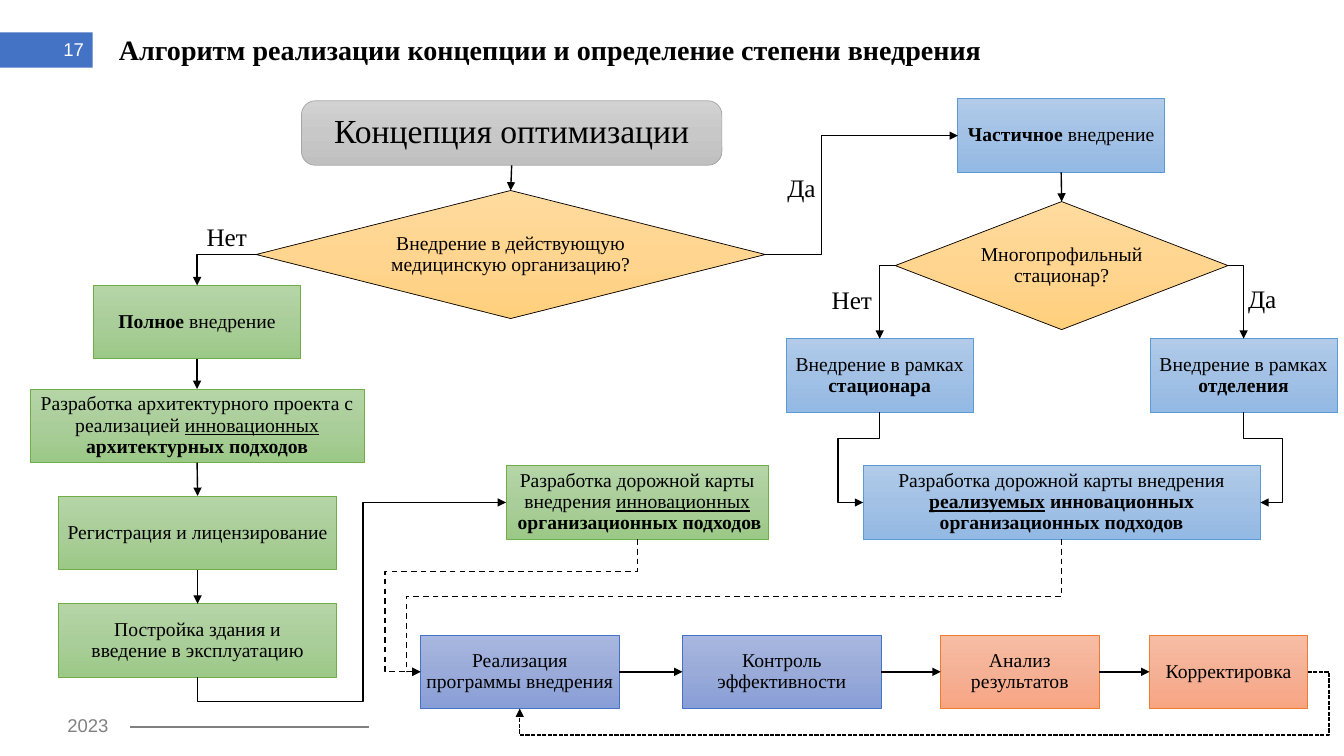
from copy import deepcopy
from dataclasses import dataclass
from enum import IntEnum
from typing import NamedTuple, Optional

from lxml.etree import SubElement
from pptx import Presentation
from pptx.dml.color import RGBColor
from pptx.enum.dml import MSO_LINE
from pptx.enum.shapes import MSO_CONNECTOR, MSO_SHAPE
from pptx.enum.text import MSO_ANCHOR, MSO_AUTO_SIZE, PP_ALIGN
from pptx.oxml.ns import qn
from pptx.util import Inches, Pt


class Tint(NamedTuple):
    top: str
    middle: str
    bottom: str
    outline: str


@dataclass(frozen=True)
class Theme:
    serif: str = "Times New Roman"
    sans: str = "Arial"
    ink: str = "000000"
    white: str = "FFFFFF"
    muted: str = "808080"
    accent: str = "4472C4"
    title_size: float = 20
    start_size: float = 24
    answer_size: float = 18
    step_size: float = 14
    footer_size: float = 13.2
    gray: Tint = Tint("D2D2D2", "C8C8C8", "C0C0C0", "A5A5A5")
    amber: Tint = Tint("FFDB9E", "FFD590", "FFD07C", "000000")
    green: Tint = Tint("B5D5A7", "AACE9A", "9CC987", "70AD47")
    blue: Tint = Tint("B1CBE9", "A3C1E5", "93B9E4", "5B9BD5")
    indigo: Tint = Tint("A8B7DF", "9AABD9", "889ED7", "4472C4")
    coral: Tint = Tint("F7BDA5", "F5B196", "F8A582", "ED7D31")


THEME = Theme()
STEP_HEIGHT = 0.73
CHOICE_HEIGHT = 1.27


class Side(IntEnum):
    TOP = 0
    LEFT = 1
    BOTTOM = 2
    RIGHT = 3


class Span(NamedTuple):
    text: str
    bold: bool = False
    underline: bool = False


@dataclass(frozen=True)
class Node:
    name: str
    left: float
    top: float
    width: float
    tint: Tint
    spans: tuple[Span, ...]
    height: float = STEP_HEIGHT
    preset: MSO_SHAPE = MSO_SHAPE.RECTANGLE
    size: float = THEME.step_size


@dataclass(frozen=True)
class Arrow:
    """bends: None is straight; otherwise the positions of the inner segments."""
    source: str
    source_side: Side
    target: str
    target_side: Side
    bends: Optional[tuple[float, ...]] = None
    dash: Optional[MSO_LINE] = None


class Label(NamedTuple):
    text: str
    left: float
    top: float
    width: float


NODES = [
    Node("concept", 2.99, 1, 4.17, THEME.gray, (Span("Концепция оптимизации"),),
         0.64, MSO_SHAPE.ROUNDED_RECTANGLE, THEME.start_size),
    Node("existing", 2.54, 1.89, 5.05, THEME.amber,
         (Span("Внедрение в действующую медицинскую организацию?"),),
         CHOICE_HEIGHT, MSO_SHAPE.FLOWCHART_DECISION),
    Node("multi", 8.88, 2, 3.3, THEME.amber, (Span("Многопрофильный стационар?"),),
         CHOICE_HEIGHT, MSO_SHAPE.FLOWCHART_DECISION),
    Node("full", 0.93, 2.83, 2.05, THEME.green, (Span("Полное", True), Span(" внедрение"))),
    Node("project", 0.3, 3.86, 3.31, THEME.green,
         (Span("Разработка архитектурного проекта с реализацией "),
          Span("инновационных", underline=True), Span(" "),
          Span("архитектурных подходов", True))),
    Node("license", 0.58, 4.92, 2.76, THEME.green, (Span("Регистрация и лицензирование"),)),
    Node("building", 0.58, 5.99, 2.76, THEME.green,
         (Span("Постройка здания и\nвведение в эксплуатацию"),)),
    Node("new map", 5.02, 4.62, 2.6, THEME.green,
         (Span("Разработка дорожной карты внедрения "),
          Span("инновационных\n", underline=True), Span(" организационных подходов", True))),
    Node("partial", 9.5, 0.98, 2.05, THEME.blue, (Span("Частичное", True), Span(" внедрение"))),
    Node("hospital", 7.8, 3.36, 1.85, THEME.blue,
         (Span("Внедрение в рамках\n"), Span("стационара", True))),
    Node("department", 11.41, 3.36, 1.85, THEME.blue,
         (Span("Внедрение в рамках\n"), Span("отделения", True))),
    Node("current map", 8.56, 4.62, 3.94, THEME.blue,
         (Span("Разработка дорожной карты внедрения "), Span("реализуемых", True, True),
          Span(" инновационных организационных подходов", True))),
    Node("program", 4.17, 6.3, 1.97, THEME.indigo, (Span("Реализация\nпрограммы внедрения"),)),
    Node("control", 6.77, 6.3, 1.97, THEME.indigo, (Span("Контроль эффективности"),)),
    Node("analysis", 9.33, 6.3, 1.57, THEME.coral, (Span("Анализ результатов"),)),
    Node("correction", 11.4, 6.3, 1.57, THEME.coral, (Span("Корректировка"),)),
]

DOWNWARD = [("concept", "existing"), ("full", "project"), ("project", "license"),
            ("license", "building"), ("partial", "multi")]
RIGHTWARD = [("program", "control"), ("control", "analysis"), ("analysis", "correction")]
ARROWS = [
    *(Arrow(a, Side.BOTTOM, b, Side.TOP) for a, b in DOWNWARD),
    *(Arrow(a, Side.RIGHT, b, Side.LEFT) for a, b in RIGHTWARD),
    Arrow("existing", Side.LEFT, "full", Side.TOP, ()),
    Arrow("multi", Side.LEFT, "hospital", Side.TOP, ()),
    Arrow("multi", Side.RIGHT, "department", Side.TOP, ()),
    Arrow("existing", Side.RIGHT, "partial", Side.LEFT, (8.15,)),
    Arrow("hospital", Side.BOTTOM, "current map", Side.LEFT, (4.35, 8.31)),
    Arrow("department", Side.BOTTOM, "current map", Side.RIGHT, (4.35, 12.72)),
    Arrow("building", Side.BOTTOM, "new map", Side.LEFT, (6.96, 3.6)),
    Arrow("new map", Side.BOTTOM, "program", Side.LEFT, (5.67, 3.82), MSO_LINE.DASH),
    Arrow("current map", Side.BOTTOM, "program", Side.LEFT, (5.92, 4.03), MSO_LINE.DASH),
    Arrow("correction", Side.RIGHT, "program", Side.BOTTOM, (13.18, 7.29), MSO_LINE.SQUARE_DOT),
]

LABELS = [Label("Нет", 1.95, 2.15, 0.61), Label("Да", 7.71, 1.66, 0.49),
          Label("Нет", 8.15, 2.77, 0.61), Label("Да", 12.28, 2.76, 0.49)]


def style_font(font, size: float, name: str = THEME.serif, color: str = THEME.ink) -> None:
    font.name, font.size = name, Pt(size)
    font.color.rgb = RGBColor.from_string(color)


def draw_text(page, label: Label, height: float, size: float, name: str, color: str):
    box = page.shapes.add_textbox(*map(Inches, (label.left, label.top, label.width, height)))
    box.text_frame.word_wrap = False
    para = box.text_frame.paragraphs[0]
    para.text = label.text
    style_font(para.runs[0].font, size, name, color)
    return box


def fill_gradient(shape, tint: Tint) -> None:
    shape.fill.gradient()
    shape.fill.gradient_angle = 270
    stop_list = shape.element.spPr.find(".//" + qn("a:gsLst"))
    stop_list.insert(1, deepcopy(stop_list[0]))
    for stop, color, position in zip(shape.fill.gradient_stops, tint, (0, 0.5, 1)):
        stop.color.rgb = RGBColor.from_string(color)
        stop.position = position


def draw_node(page, node: Node):
    shape = page.shapes.add_shape(
        node.preset, *map(Inches, (node.left, node.top, node.width, node.height)))
    if node.preset == MSO_SHAPE.ROUNDED_RECTANGLE:
        shape.adjustments[0] = 0.216
    shape.shadow.inherit = False
    fill_gradient(shape, node.tint)
    shape.line.color.rgb = RGBColor.from_string(node.tint.outline)
    shape.line.width = Pt(0.5)
    frame = shape.text_frame
    frame.word_wrap, frame.vertical_anchor = True, MSO_ANCHOR.MIDDLE
    frame.margin_left = frame.margin_right = frame.margin_top = frame.margin_bottom = Inches(0.01)
    para = frame.paragraphs[0]
    para.alignment, para.line_spacing = PP_ALIGN.CENTER, 0.9
    for span in node.spans:
        for index, line in enumerate(span.text.split("\n")):
            if index:
                para.add_line_break()
            if line:
                run = para.add_run()
                run.text = line
                style_font(run.font, node.size)
                run.font.bold, run.font.underline = span.bold, span.underline
    return shape


def bend(line, bends: tuple[float, ...], vertical: bool) -> None:
    """Turn a connector into an elbow whose first segment is vertical or horizontal."""
    start, end = (line.begin_x, line.begin_y), (line.end_x, line.end_y)
    axes = (1, 0) if vertical else (0, 1)
    along, across = (end[axis] - start[axis] for axis in axes)
    flip_h, flip_v, turn = along < 0, (across > 0 if vertical else across < 0), 90 * vertical
    if flip_h != flip_v:
        flip_h, flip_v, turn = flip_v, flip_h, turn + 180
    width, height = abs(along), abs(across)
    line.left = (start[0] + end[0] - width) // 2
    line.top = (start[1] + end[1] - height) // 2
    line.width, line.height = width, height
    frame = line._element.spPr.find(qn("a:xfrm"))
    for key, value in (("rot", turn * 60000), ("flipH", int(flip_h)), ("flipV", int(flip_v))):
        frame.set(key, str(value))
    geometry = line._element.spPr.find(qn("a:prstGeom"))
    geometry.set("prst", f"bentConnector{len(bends) + 2}")
    guides = geometry.find(qn("a:avLst"))
    for number, (place, axis, extent) in enumerate(zip(bends, axes, (along, across)), 1):
        ratio = round((Inches(place) - start[axis]) / extent * 100000)
        SubElement(guides, qn("a:gd"), name=f"adj{number}", fmla=f"val {ratio}")


def style_line(line, color: str, width: float) -> None:
    line.line.color.rgb = RGBColor.from_string(color)
    line.line.width = Pt(width)
    SubElement(line._element.spPr, qn("a:effectLst"))


def draw_arrow(page, arrow: Arrow, shapes: dict) -> None:
    kind = MSO_CONNECTOR.STRAIGHT if arrow.bends is None else MSO_CONNECTOR.ELBOW
    line = page.shapes.add_connector(kind, 0, 0, 0, 0)
    line.begin_connect(shapes[arrow.source], arrow.source_side)
    line.end_connect(shapes[arrow.target], arrow.target_side)
    if arrow.bends is not None:
        bend(line, arrow.bends, arrow.source_side in (Side.TOP, Side.BOTTOM))
    style_line(line, THEME.ink, 1)
    if arrow.dash is not None:
        line.line.dash_style = arrow.dash
    SubElement(line.line._get_or_add_ln(), qn("a:tailEnd"), type="triangle")


def draw_title(page) -> None:
    title = page.shapes.title
    title.left, title.top, title.width, title.height = map(Inches, (0.98, 0.27, 10.2, 0.47))
    frame = title.text_frame
    frame.text = "Алгоритм реализации концепции и определение степени внедрения"
    frame.auto_size, frame.vertical_anchor = MSO_AUTO_SIZE.NONE, MSO_ANCHOR.MIDDLE
    frame.margin_left = frame.margin_right = frame.margin_top = frame.margin_bottom = 0
    para = frame.paragraphs[0]
    para.alignment, para.line_spacing = PP_ALIGN.LEFT, 0.9
    para._p.get_or_add_pPr().set("marL", str(Inches(0.2)))
    style_font(para.runs[0].font, THEME.title_size)
    para.runs[0].font.bold = True


def draw_page_marks(page) -> None:
    bar = page.shapes.add_shape(MSO_SHAPE.RECTANGLE, 0, *map(Inches, (0.32, 0.92, 0.35)))
    bar.shadow.inherit = False
    bar.fill.solid()
    bar.fill.fore_color.rgb = RGBColor.from_string(THEME.accent)
    bar.line.fill.background()
    number = draw_text(page, Label("17", -0.03, 0.29, 0.96), 0.4,
                       THEME.footer_size, THEME.sans, THEME.white)
    number.text_frame.word_wrap = True
    number.text_frame.vertical_anchor = MSO_ANCHOR.MIDDLE
    number.text_frame.paragraphs[0].alignment = PP_ALIGN.RIGHT
    draw_text(page, Label("2023", 0.57, 7.03, 0.63), 0.32,
              THEME.footer_size, THEME.sans, THEME.muted)
    rule = page.shapes.add_connector(
        MSO_CONNECTOR.STRAIGHT, *map(Inches, (1.29, 7.21, 3.66, 7.21)))
    style_line(rule, THEME.muted, 1.5)


def main() -> None:
    deck = Presentation()
    deck.slide_width, deck.slide_height = Inches(13.33), Inches(7.5)
    page = deck.slides.add_slide(deck.slide_layouts.get_by_name("Title Only"))
    draw_title(page)
    draw_page_marks(page)
    shapes = {node.name: draw_node(page, node) for node in NODES}
    for arrow in ARROWS:
        draw_arrow(page, arrow, shapes)
    for label in LABELS:
        draw_text(page, label, 0.4, THEME.answer_size, THEME.serif, THEME.ink)
    deck.save("out.pptx")


if __name__ == "__main__":
    main()
